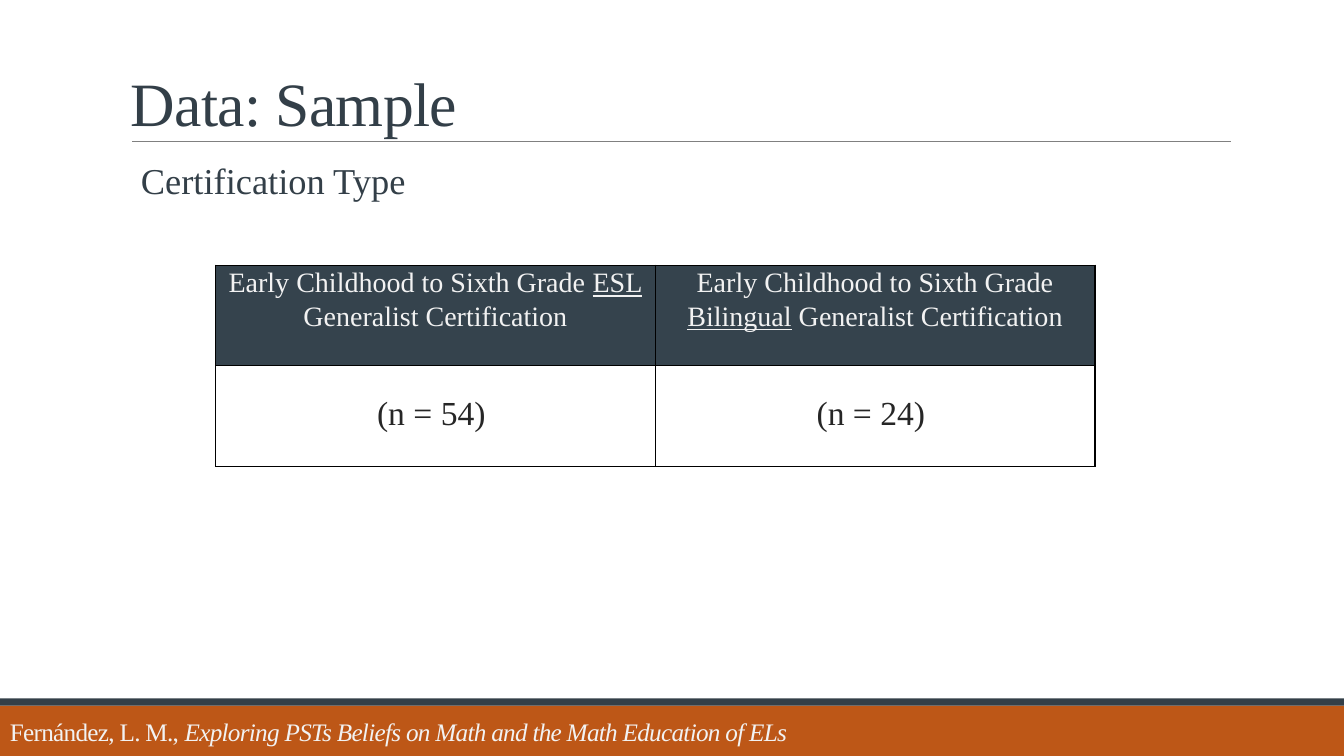
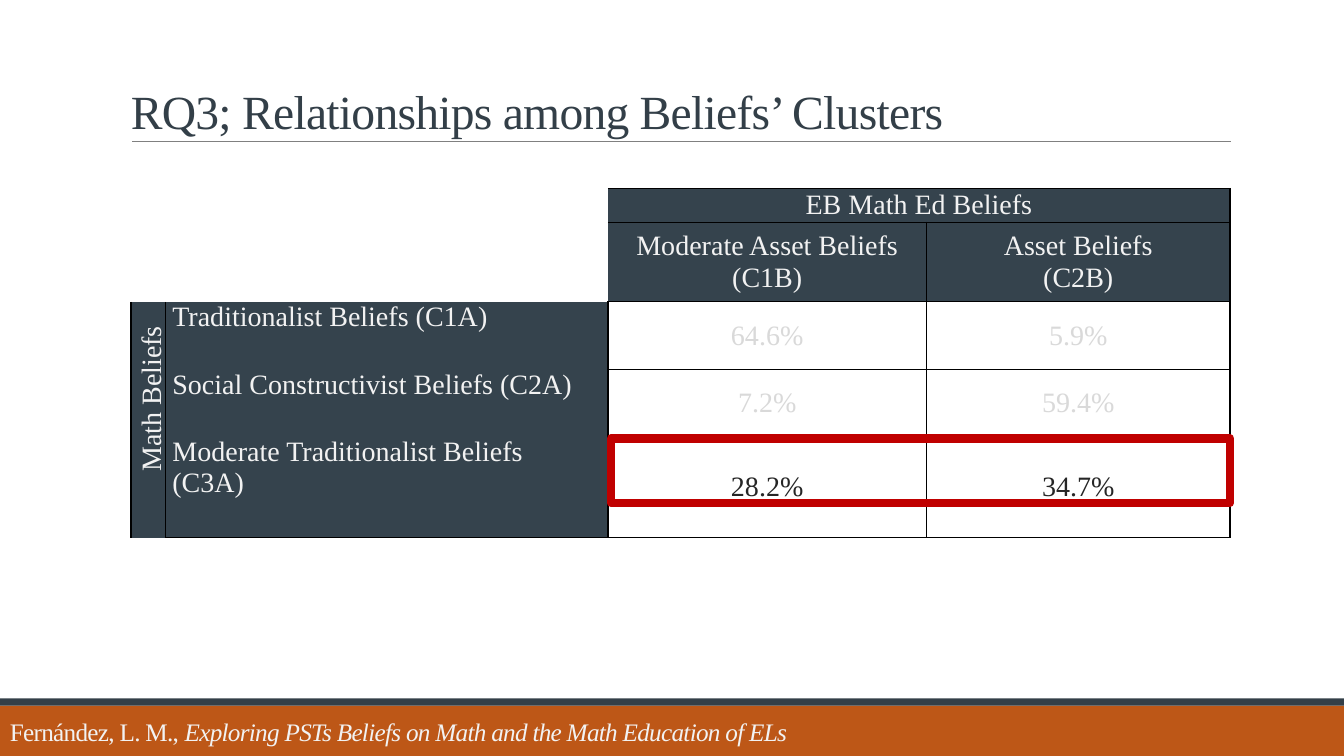
from dataclasses import dataclass
from typing import NamedTuple, Optional, Sequence, Union

from lxml import etree
from pptx import Presentation
from pptx.dml.color import RGBColor
from pptx.enum.shapes import MSO_CONNECTOR, MSO_SHAPE
from pptx.enum.text import MSO_ANCHOR, PP_ALIGN
from pptx.oxml.ns import qn
from pptx.shapes.autoshape import Shape
from pptx.slide import Slide
from pptx.table import _Cell
from pptx.text.text import TextFrame
from pptx.util import Inches, Length, Pt

RECT = MSO_SHAPE.RECTANGLE
LINE = MSO_CONNECTOR.STRAIGHT
LEFT, MID = PP_ALIGN.LEFT, PP_ALIGN.CENTER
TOP, CENTRE, BASE = MSO_ANCHOR.TOP, MSO_ANCHOR.MIDDLE, MSO_ANCHOR.BOTTOM
PLAIN = "{2D5ABB26-0587-4C30-8999-92F81FD0307C}"


@dataclass(frozen=True)
class Theme:
    font: str = "Times New Roman"
    band: str = "BD5717"
    navy: str = "333F48"
    rule: str = "808080"
    head: str = "35434D"
    pale: str = "F2F2F2"
    dark: str = "262626"
    faint: str = "D9D9D9"
    alert: str = "C00000"
    edge: str = "000000"
    title: int = 44
    small: int = 34
    sub: int = 26
    count: int = 24
    body: int = 20
    foot: int = 18


THEME = Theme()


class Run(NamedTuple):
    text: str
    under: bool = False
    slant: bool = False


class Box(NamedTuple):
    left: float
    top: float
    width: float
    height: float

    def place(self) -> tuple[Length, ...]:
        return tuple(Inches(side) for side in self)


Line = Union[str, Sequence[Run]]


@dataclass(frozen=True)
class Cell:
    lines: Sequence[Line] = ()
    edges: str = ""
    fill: Optional[str] = None
    size: int = THEME.body
    color: str = THEME.pale
    align: PP_ALIGN = MID
    anchor: MSO_ANCHOR = CENTRE
    lead: Optional[Length] = None


class Merge(NamedTuple):
    first: tuple[int, int]
    last: tuple[int, int]


def rgb(code: str) -> RGBColor:
    return RGBColor.from_string(code)


def put(frame: TextFrame, lines: Sequence[Line], *, size: int, color: str,
        align: PP_ALIGN = LEFT, anchor: MSO_ANCHOR = TOP,
        lead: Union[float, Length, None] = None, track: float = 0) -> None:
    frame.word_wrap = True
    frame.vertical_anchor = anchor
    for index, line in enumerate(lines):
        para = frame.add_paragraph() if index else frame.paragraphs[0]
        para.alignment = align
        para.line_spacing = lead
        for part in [Run(line)] if isinstance(line, str) else line:
            run = para.add_run()
            run.text = part.text
            font = run.font
            font.name, font.size = THEME.font, Pt(size)
            font.color.rgb = rgb(color)
            font.underline = part.under or None
            font.italic = part.slant or None
            if track:
                run._r.get_or_add_rPr().set("spc", str(int(track * 100)))


def write(slide: Slide, box: Box, lines: Sequence[Line], **style) -> Shape:
    shape = slide.shapes.add_textbox(*box.place())
    put(shape.text_frame, lines, **style)
    return shape


def band(slide: Slide, box: Box, fill: str) -> None:
    shape = slide.shapes.add_shape(RECT, *box.place())
    shape.shadow.inherit = False
    shape.fill.solid()
    shape.fill.fore_color.rgb = rgb(fill)
    shape.line.fill.background()


def ring(slide: Slide, box: Box) -> None:
    shape = slide.shapes.add_shape(RECT, *box.place())
    shape.shadow.inherit = False
    shape.fill.background()
    shape.line.color.rgb = rgb(THEME.alert)
    shape.line.width = Pt(6)
    etree.SubElement(shape.line._get_or_add_ln(), qn("a:round"))


def start(deck: Presentation, title: str, size: int) -> Slide:
    slide = deck.slides.add_slide(deck.slide_layouts[6])
    band(slide, Box(0, 7, 13.33, 0.5), THEME.band)
    band(slide, Box(0, 6.93, 13.33, 0.07), THEME.navy)
    rule = slide.shapes.add_connector(
        LINE, Inches(1.31), Inches(1.4), Inches(12.21), Inches(1.4))
    rule.line.color.rgb = rgb(THEME.rule)
    rule.line.width = Pt(0.5)
    etree.SubElement(rule._element.spPr, qn("a:effectLst"))
    write(slide, Box(1.2, 0.52, 11.74, 0.91), [title], size=size,
          color=THEME.navy, anchor=BASE, lead=0.85, track=-0.5)
    write(slide, Box(0, 7.06, 10.5, 0.4),
          [[Run("Fernández, L. M., "),
            Run("Exploring PSTs Beliefs on Math and the Math Education of ELs",
                slant=True)]],
          size=THEME.foot, color=THEME.pale, track=-0.5)
    return slide


def border(cell: _Cell, edges: str) -> None:
    props = cell._tc.get_or_add_tcPr()
    for index, side in enumerate("LRTB"):
        line = etree.Element(qn(f"a:ln{side}"), w=str(Pt(1)))
        if side.lower() in edges:
            fill = etree.SubElement(line, qn("a:solidFill"))
            etree.SubElement(fill, qn("a:srgbClr"), val=THEME.edge)
        else:
            etree.SubElement(line, qn("a:noFill"))
        props.insert(index, line)


def dress(cell: _Cell, spec: Cell) -> None:
    cell.margin_left = cell.margin_right = Inches(0.07)
    cell.margin_top = cell.margin_bottom = 0
    if spec.fill:
        cell.fill.solid()
        cell.fill.fore_color.rgb = rgb(spec.fill)
    else:
        cell.fill.background()
    border(cell, spec.edges)
    if spec.lines:
        put(cell.text_frame, spec.lines, size=spec.size, color=spec.color,
            align=spec.align, lead=spec.lead)
        cell.vertical_anchor = spec.anchor


def grid(slide: Slide, left: float, top: float, cols: Sequence[float],
         rows: Sequence[float], cells: Sequence[Sequence[Cell]],
         merges: Sequence[Merge] = ()) -> None:
    box = Box(left, top, sum(cols), sum(rows))
    table = slide.shapes.add_table(len(rows), len(cols), *box.place()).table
    table.first_row = table.horz_banding = False
    table._tbl.tblPr.find(qn("a:tableStyleId")).text = PLAIN
    for col, width in zip(table.columns, cols):
        col.width = Inches(width)
    for row, height in zip(table.rows, rows):
        row.height = Inches(height)
    for row, specs in enumerate(cells):
        for col, spec in enumerate(specs):
            dress(table.cell(row, col), spec)
    for merge in merges:
        table.cell(*merge.first).merge(table.cell(*merge.last))


def sample(deck: Presentation) -> None:
    slide = start(deck, "Data: Sample", THEME.title)
    write(slide, Box(1.3, 1.43, 10.9, 0.6), ["Certification Type"],
          size=THEME.sub, color=THEME.navy, lead=1.2)
    side = Cell(edges="r")
    heads = [
        Cell([[Run("Early Childhood to Sixth Grade "), Run(kind, under=True),
               Run(" Generalist Certification")]],
             "lrtb", THEME.head, anchor=TOP, lead=Pt(24))
        for kind in ("ESL", "Bilingual")]
    counts = [Cell([f"(n = {count}) "], "lrtb", size=THEME.count,
                   color=THEME.dark, lead=Pt(24)) for count in (54, 24)]
    grid(slide, 0.37, 2.63, (1.77, 4.36, 4.36), (1, 1),
         [[side, *heads], [side, *counts]])


def clusters(deck: Presentation) -> None:
    slide = start(deck, "RQ3; Relationships among Beliefs’ Clusters",
                  THEME.small)
    blank = Cell()
    cells = [
        [blank, blank, Cell(["EB Math Ed Beliefs"], "rtb", THEME.head),
         Cell(edges="rtb", fill=THEME.head)],
        [blank, blank,
         Cell(["Moderate Asset Beliefs", "(C1B)"], "rtb", THEME.head),
         Cell(["Asset Beliefs", "(C2B)"], "lrtb", THEME.head)]]
    results = (
        ("Traditionalist Beliefs (C1A)", "64.6%", "5.9%", THEME.faint, "lr"),
        ("Social Constructivist Beliefs (C2A)", "7.2%", "59.4%",
         THEME.faint, "lr"),
        ("Moderate Traditionalist Beliefs (C3A)", "28.2%", "34.7%",
         THEME.dark, "lrb"))
    for name, first, second, color, edges in results:
        cells.append([
            Cell(edges=edges, fill=THEME.head),
            Cell([name], "lrb", THEME.head, align=LEFT, anchor=TOP),
            *(Cell([value], "lrtb", color=color)
              for value in (first, second))])
    grid(slide, 1.3, 1.87, (0.34, 4.39, 3.16, 3.01),
         (0.33, 0.79, 0.67, 0.67, 1), cells,
         [Merge((0, 2), (0, 3)), Merge((2, 0), (4, 0))])
    label = write(slide, Box(0.53, 3.28, 2.28, 0.72), ["Math Beliefs"],
                  size=THEME.body, color=THEME.pale, lead=0.9)
    label.rotation = 270
    ring(slide, Box(6.06, 4.35, 6.14, 0.64))


def main() -> None:
    deck = Presentation()
    deck.slide_width, deck.slide_height = Inches(13.33), Inches(7.5)
    sample(deck)
    clusters(deck)
    deck.save("out.pptx")


if __name__ == "__main__":
    main()
